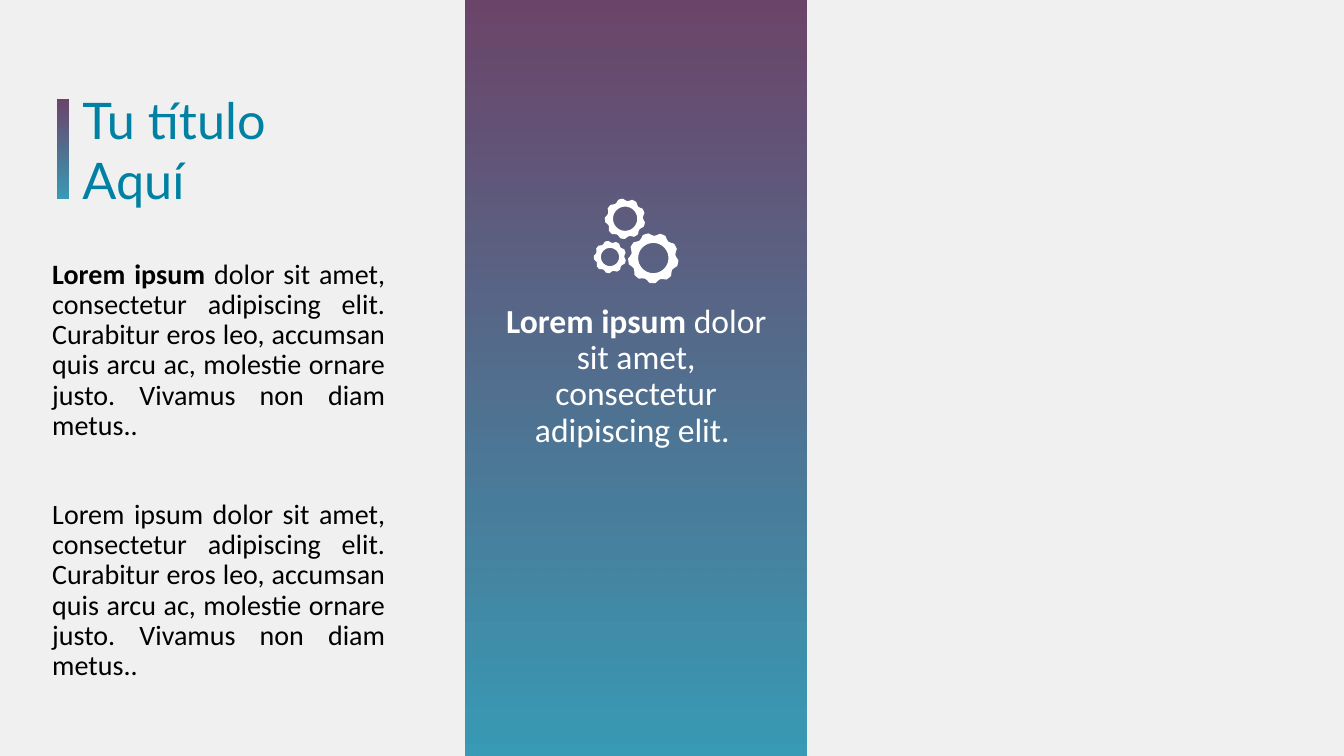
import math

import pptx
import pptx.dml.color
import pptx.enum.shapes
import pptx.enum.text
import pptx.oxml.ns
import pptx.util
from pptx.util import Inches

ALIGN = pptx.enum.text.PP_ALIGN
LOREM = ("dolor sit amet, consectetur adipiscing elit. Curabitur eros leo, "
         "accumsan quis arcu ac, molestie ornare justo. Vivamus non diam metus..")


def color(code):
    return pptx.dml.color.RGBColor.from_string(code)


class Deck:
    """Style of the deck and the slide being drawn."""

    back, white, black, teal = "F0F0F0", "FFFFFF", "000000", "0081A4"
    fade = [("3B0538", 73), ("0081A4", 77)]

    def __init__(self):
        self.prs = pptx.Presentation()
        self.prs.slide_width = Inches(13.33)
        self.prs.slide_height = Inches(7.5)
        self.slide = self.prs.slides.add_slide(self.prs.slide_layouts[6])
        fill = self.slide.background.fill
        fill.solid()
        fill.fore_color.rgb = color(self.back)

    def panel(self, *box):
        """Add a rectangle that fades, half clear, from top to bottom."""
        shape = self.slide.shapes.add_shape(
            pptx.enum.shapes.MSO_SHAPE.RECTANGLE, *map(Inches, box))
        shape.shadow.inherit = False
        shape.line.fill.background()
        shape.fill.gradient()
        shape.fill.gradient_angle = 270
        for stop, (code, _) in zip(shape.fill.gradient_stops, self.fade):
            stop.color.rgb = color(code)
        tints = shape._element.spPr.iter(pptx.oxml.ns.qn("a:srgbClr"))
        for tint, (_, alpha) in zip(tints, self.fade):
            node = pptx.oxml.parse_xml(
                f'<a:alpha {pptx.oxml.ns.nsdecls("a")} val="{alpha * 1000}"/>')
            tint.append(node)

    def text(self, box, paras, size, code, font="Calibri", align=ALIGN.LEFT,
             pitch=None, gaps=(0, 0)):
        """Add a text box; each paragraph is a (bold lead, plain rest) pair."""
        frame = self.slide.shapes.add_textbox(*map(Inches, box)).text_frame
        frame.word_wrap = True
        for i, (parts, gap) in enumerate(zip(paras, gaps)):
            para = frame.add_paragraph() if i else frame.paragraphs[0]
            para.alignment = align
            para.line_spacing = pitch
            para.space_before = pptx.util.Pt(gap)
            for part, bold in zip(parts, (True, False)):
                if part:
                    run = para.add_run()
                    run.text = part
                    run.font.name = font
                    run.font.size = pptx.util.Pt(size)
                    run.font.bold = bold
                    run.font.color.rgb = color(code)

    def gear(self, group, x, y, size, hole, turn, teeth=9):
        """Add a cogwheel with a round hole, turned by some degrees."""
        def ring(count, reach):
            points = []
            for i in range(count):
                angle = math.radians(turn + 360 * i / count)
                points.append((Inches(x + reach(i) * math.cos(angle)),
                               Inches(y + reach(i) * math.sin(angle))))
            return points

        # Six steps a tooth: three on the tip, two in the dip, one between
        steps = (1, 1, 0.92, 0.88, 0.92, 1)
        rim = ring(teeth * 6, lambda i: size * steps[i % 6])
        eye = ring(48, lambda i: hole)
        pen = group.shapes.build_freeform(*rim[0])
        pen.add_line_segments(rim[1:])
        pen.move_to(*eye[0])
        pen.add_line_segments(eye[1:])
        shape = pen.convert_to_shape()
        shape.shadow.inherit = False
        shape.fill.solid()
        shape.fill.fore_color.rgb = color(self.white)
        shape.line.fill.background()


def main():
    deck = Deck()
    deck.panel(4.62, 0, 3.38, 7.5)
    deck.text((0.42, 2.53, 3.5, 4.45),
              [("Lorem ipsum ", LOREM), ("", "Lorem ipsum " + LOREM)],
              20, deck.black, align=ALIGN.JUSTIFY, pitch=0.9, gaps=(10, 42))
    deck.text((4.85, 2.97, 2.92, 2.61),
              [("Lorem ipsum ", "dolor sit amet, consectetur adipiscing elit. ")],
              24, deck.white, align=ALIGN.CENTER, pitch=0.9, gaps=(10,))
    deck.text((0.72, 0.83, 5.54, 1.31), [("", "Tu título"), ("", "Aquí")],
              36, deck.teal, font="Lato")
    deck.panel(0.57, 0.99, 0.11, 0.98)
    gears = deck.slide.shapes.add_group_shape()
    deck.gear(gears, 6.2, 2.17, 0.2, 0.12, -23)
    deck.gear(gears, 6.05, 2.55, 0.16, 0.09, -22)
    deck.gear(gears, 6.48, 2.56, 0.25, 0.15, -28)
    deck.prs.save("out.pptx")


if __name__ == "__main__":
    main()
